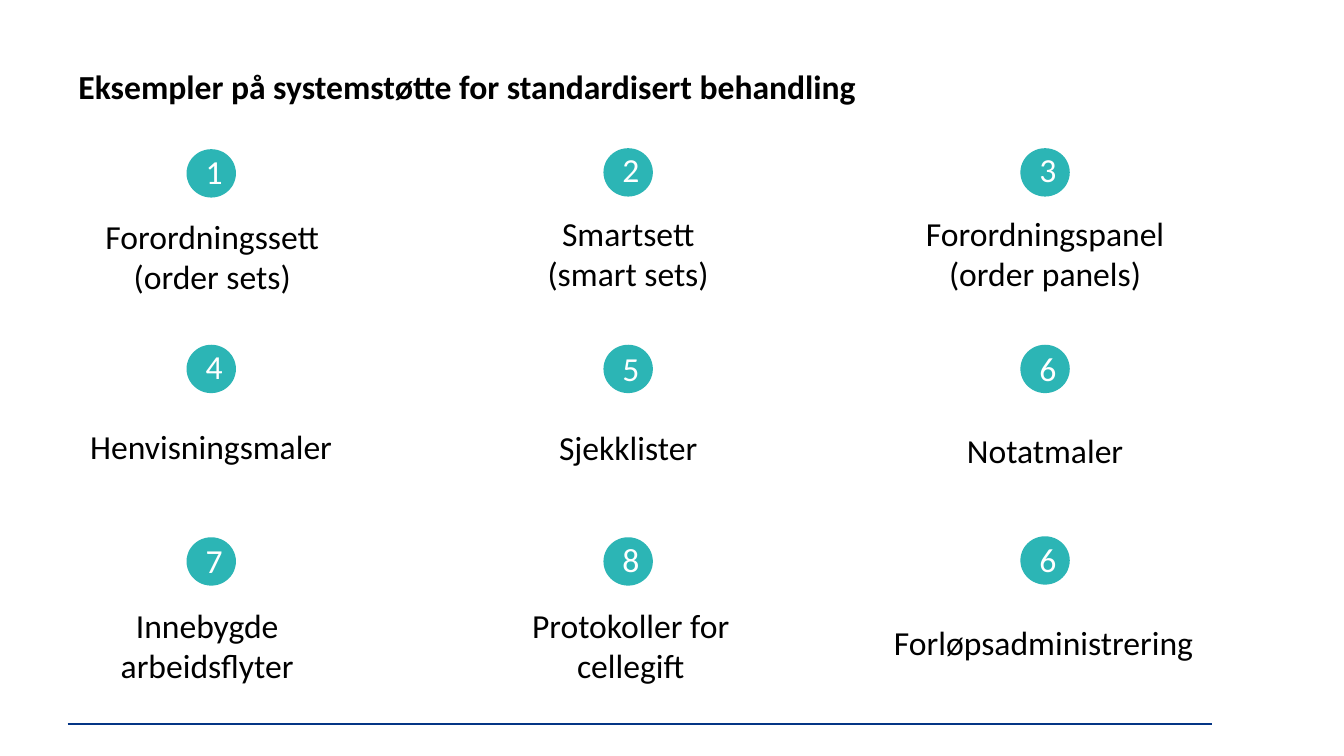
from lxml.etree import SubElement
from pptx import Presentation
from pptx.dml.color import RGBColor
from pptx.enum.shapes import MSO_CONNECTOR as Connector, MSO_SHAPE as Shape
from pptx.enum.text import MSO_ANCHOR as Anchor, PP_ALIGN as Align
from pptx.oxml.ns import qn
from pptx.util import Inches, Pt

TITLE = "Eksempler på systemstøtte for standardisert behandling"
# number, label, circle top, number top, label left, label top, label width, label height
EXAMPLES = [
    ("1", "Forordningssett (order sets)", 1.48, 1.45, 0.69, 2.09, 2.83, 0.56),
    ("2", "Smartsett (smart sets)", 1.47, 1.43, 5.09, 2.06, 2.28, 0.56),
    ("3", "Forordningspanel (order panels)", 1.47, 1.43, 8.99, 2.06, 2.75, 0.91),
    ("4", "Henvisningsmaler", 3.42, 3.38, 0.68, 4.18, 2.83, 0.31),
    ("5", "Sjekklister", 3.42, 3.40, 5.09, 4.19, 2.28, 0.31),
    ("6", "Notatmaler", 3.42, 3.40, 8.99, 4.22, 2.75, 0.31),
    ("7", "Innebygde arbeidsflyter", 5.33, 5.31, 0.64, 5.95, 2.83, 0.91),
    ("8", "Protokoller for cellegift", 5.33, 5.30, 4.86, 5.95, 2.79, 0.91),
    ("6", "Forløpsadministrering", 5.32, 5.30, 8.75, 6.12, 3.2, 0.5),
]
COLORS = {"circle": "2CB5B5", "number": "FFFFFF", "text": "000000", "rule": "043585"}
COLUMNS = 3
FIRST_CENTER, COLUMN_PITCH = 2.095, 4.135
CIRCLE_WIDTH, CIRCLE_HEIGHT = 0.49, 0.48
NUMBER_WIDTH, NUMBER_HEIGHT = 0.31, 0.5


def color(name):
    return RGBColor.from_string(COLORS[name])


def add_text(shapes, text, box, color_name, align=Align.CENTER, bold=False):
    frame = shapes.add_textbox(*map(Inches, box)).text_frame
    frame.word_wrap = True
    frame.vertical_anchor = Anchor.TOP
    paragraph = frame.paragraphs[0]
    paragraph.alignment = align
    run = paragraph.add_run()
    run.text = text
    run.font.name = "Calibri"
    run.font.size = Pt(24)
    run.font.bold = bold
    run.font.color.rgb = color(color_name)


def add_example(slide, column, example):
    number, label, circle_top, number_top, *label_box = example
    center = FIRST_CENTER + column * COLUMN_PITCH
    shapes = slide.shapes.add_group_shape().shapes
    circle_box = (center - CIRCLE_WIDTH / 2, circle_top, CIRCLE_WIDTH, CIRCLE_HEIGHT)
    circle = shapes.add_shape(Shape.OVAL, *map(Inches, circle_box))
    circle.shadow.inherit = False
    circle.fill.solid()
    circle.fill.fore_color.rgb = color("circle")
    circle.line.fill.background()
    number_box = (center - NUMBER_WIDTH / 2, number_top, NUMBER_WIDTH, NUMBER_HEIGHT)
    add_text(shapes, number, number_box, "number")
    add_text(shapes, label, label_box, "text")


def main():
    presentation = Presentation()
    presentation.slide_width = Inches(13.33)
    presentation.slide_height = Inches(7.5)
    slide = presentation.slides.add_slide(presentation.slide_layouts[6])

    rule = slide.shapes.add_connector(
        Connector.STRAIGHT, *map(Inches, (0.67, 7.18, 12.02, 7.18)))
    rule.line.color.rgb = color("rule")
    rule.line.width = Pt(1.25)
    SubElement(rule.element.spPr, qn("a:effectLst"))

    add_text(slide.shapes, TITLE, (0.68, 0.6, 11.18, 0.5), "text", Align.LEFT, True)
    for index, example in enumerate(EXAMPLES):
        add_example(slide, index % COLUMNS, example)
    presentation.save("out.pptx")


if __name__ == "__main__":
    main()
